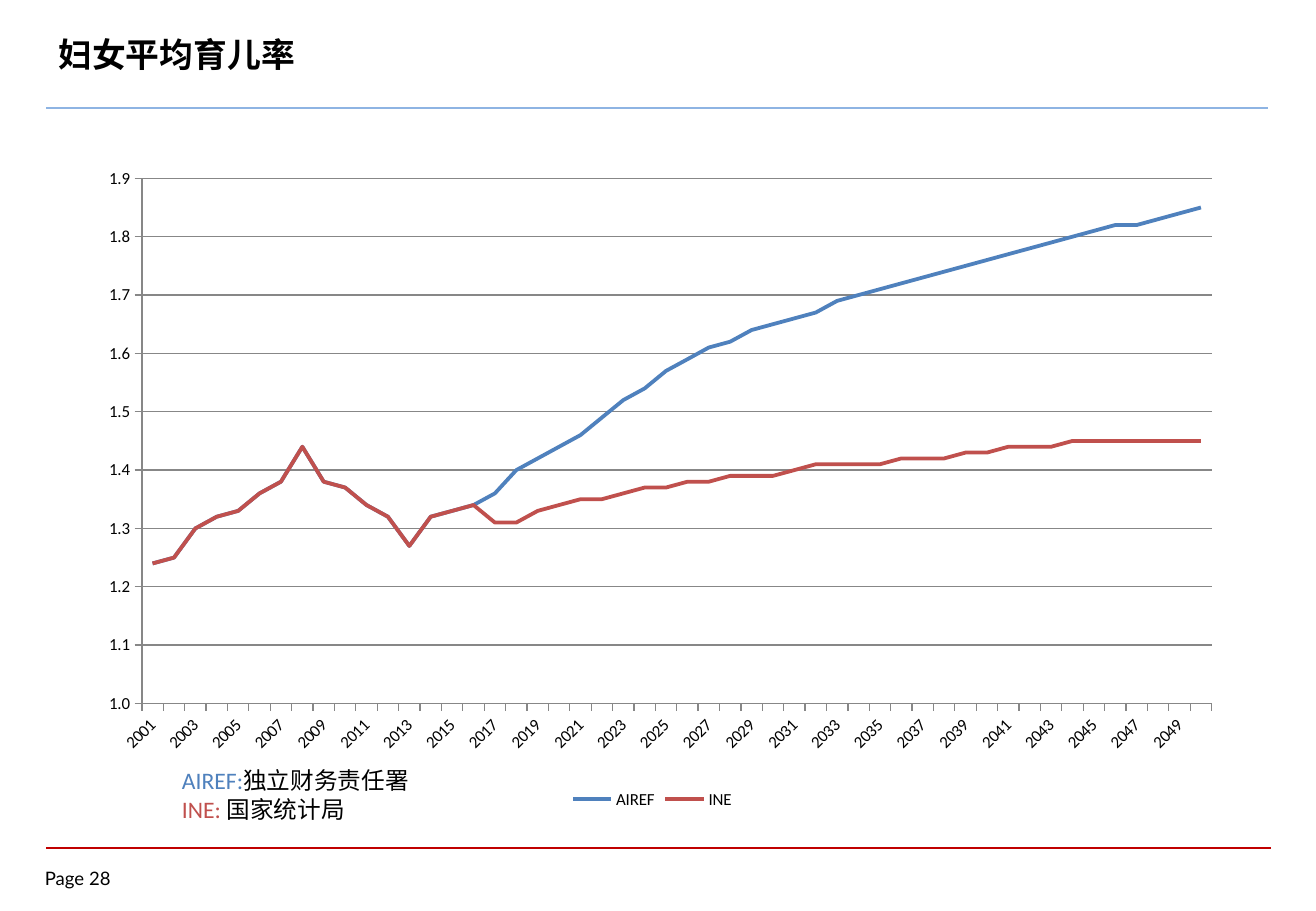
from lxml import etree
from pptx import Presentation
from pptx.chart.data import CategoryChartData
from pptx.dml.color import RGBColor
from pptx.enum import chart as ch, shapes, text
from pptx.oxml import parse_xml
from pptx.oxml.ns import qn, nsdecls
from pptx.util import Pt

# Content
COLORS = {"black": "000000", "white": "FFFFFF", "red": "C00000", "sky": "8EB4E3",
          "grid": "878787", "AIREF": "4F81BD", "INE": "C0504D"}
TITLE = "妇女平均育儿率"
PAGE = "Page 28"
NOTES = [("AIREF", "AIREF:", "独立财务责任署"), ("INE", "INE: ", "国家统计局")]
FIRST_YEAR, LAST_YEAR = 2001, 2050
OBSERVED = [1.24, 1.25, 1.3, 1.32, 1.33, 1.36, 1.38, 1.44,
            1.38, 1.37, 1.34, 1.32, 1.27, 1.32, 1.33, 1.34]
FORECASTS = {
    "AIREF": [1.36, 1.4, 1.42, 1.44, 1.46, 1.49, 1.52, 1.54, 1.57, 1.59, 1.61, 1.62,
              1.64, 1.65, 1.66, 1.67, 1.69, 1.7, 1.71, 1.72, 1.73, 1.74, 1.75, 1.76,
              1.77, 1.78, 1.79, 1.8, 1.81, 1.82, 1.82, 1.83, 1.84, 1.85],
    "INE": [1.31, 1.31, 1.33, 1.34, 1.35, 1.35, 1.36, 1.37, 1.37, 1.38, 1.38, 1.39,
            1.39, 1.39, 1.4, 1.41, 1.41, 1.41, 1.41, 1.42, 1.42, 1.42, 1.43, 1.43,
            1.44, 1.44, 1.44, 1.45, 1.45, 1.45, 1.45, 1.45, 1.45, 1.45],
}
PLOT = {"x": 0.073, "y": 0.071, "w": 0.895, "h": 0.768}
# Rules: left, right, y, colour, width
RULES = [(27.4, 753.1, 502.6, "red", 1), (27.4, 751.7, 64.1, "sky", 1.5)]


def rgb(name):
    return RGBColor.from_string(COLORS[name])


def add_run(p, words, size, font, color="black", bold=False):
    r = p.add_run()
    r.text = words
    r.font.size, r.font.name, r.font.bold = Pt(size), font, bold
    r.font.color.rgb = rgb(color)


def set_margins(tf, x, y):
    tf.margin_left = tf.margin_right = Pt(x)
    tf.margin_top = tf.margin_bottom = Pt(y)


prs = Presentation()
prs.slide_width, prs.slide_height = Pt(780), Pt(540)
s = prs.slides.add_slide(prs.slide_layouts[5])

# Header and footer rules
for left, right, y, color, width in RULES:
    line = s.shapes.add_connector(shapes.MSO_CONNECTOR.STRAIGHT,
                                  Pt(left), Pt(y), Pt(right), Pt(y))
    line.line.color.rgb, line.line.width = rgb(color), Pt(width)
    etree.SubElement(line._element.spPr, qn("a:effectLst"))

# Title
title = s.shapes.title
title.left, title.top, title.width, title.height = Pt(27.4), Pt(6.5), Pt(714.2), Pt(51.1)
tf = title.text_frame
tf.vertical_anchor = text.MSO_ANCHOR.MIDDLE
set_margins(tf, 7.2, 3.6)
tf.paragraphs[0].alignment = text.PP_ALIGN.LEFT
add_run(tf.paragraphs[0], TITLE, 20, "Lato", bold=True)

# Page number
tf = s.shapes.add_textbox(Pt(26.6), Pt(514.1), Pt(52.6), Pt(15.8)).text_frame
set_margins(tf, 0, 0)
add_run(tf.paragraphs[0], PAGE, 11, "Lato")

# Fertility chart
data = CategoryChartData(number_format="0.00")
data.categories = [str(year) for year in range(FIRST_YEAR, LAST_YEAR + 1)]
for name, forecast in FORECASTS.items():
    data.add_series(name, OBSERVED + forecast)
chart = s.shapes.add_chart(ch.XL_CHART_TYPE.LINE, Pt(32.4), Pt(77), Pt(708.5), Pt(405.4),
                           data).chart
chart.font.size, chart.font.name = Pt(10), "Calibri"
chart.font.color.rgb = rgb("black")
chart.has_title = False
chart.has_legend = True
chart.legend.position = ch.XL_LEGEND_POSITION.BOTTOM
chart.legend.include_in_layout = False
chart.plots[0].vary_by_categories = False
for series in chart.plots[0].series:
    series.smooth = False
    series.marker.style = ch.XL_MARKER_STYLE.NONE
    series.format.line.color.rgb = rgb(series.name)
    series.format.line.width = Pt(2.25)

# Axes
years, rates = chart.category_axis, chart.value_axis
rates.minimum_scale, rates.maximum_scale, rates.major_unit = 1, 1.9, 0.1
rates.tick_labels.number_format = "0.0"
rates.tick_labels.number_format_is_linked = False
rates.has_major_gridlines = True
for axis in (years, rates):
    axis.major_tick_mark = ch.XL_TICK_MARK.OUTSIDE
    axis.minor_tick_mark = ch.XL_TICK_MARK.NONE
    axis.tick_labels.font.size = Pt(10)
for part in (years, rates, rates.major_gridlines):
    part.format.line.color.rgb, part.format.line.width = rgb("grid"), Pt(0.75)

# Slanted label for every second year
cat_ax = years._element
cat_ax.find(qn("c:txPr")).find(qn("a:bodyPr")).set("rot", "-2700000")
cat_ax.find(qn("c:lblOffset")).addnext(
    parse_xml(f'<c:tickLblSkip {nsdecls("c")} val="2"/>'))

# Fixed inner plot area
plot_area = chart._chartSpace.chart.plotArea
for old in plot_area.findall(qn("c:layout")):
    plot_area.remove(old)
modes = '<c:layoutTarget val="inner"/><c:xMode val="edge"/><c:yMode val="edge"/>'
sizes = "".join(f'<c:{key} val="{val}"/>' for key, val in PLOT.items())
plot_area.insert(0, parse_xml(
    f'<c:layout {nsdecls("c")}><c:manualLayout>{modes}{sizes}</c:manualLayout></c:layout>'))

# Key to the abbreviations
sp = s.shapes.add_shape(shapes.MSO_SHAPE.RECTANGLE, Pt(100.8), Pt(450.7), Pt(175.7), Pt(41))
sp.shadow.inherit = False
sp.fill.solid()
sp.fill.fore_color.rgb = rgb("white")
sp.line.fill.background()
tf = sp.text_frame
tf.word_wrap = True
tf.vertical_anchor = text.MSO_ANCHOR.TOP
set_margins(tf, 7.2, 3.6)
for i, (color, label, meaning) in enumerate(NOTES):
    p = tf.add_paragraph() if i else tf.paragraphs[0]
    p.alignment = text.PP_ALIGN.LEFT
    add_run(p, label, 14, "Calibri", color)
    add_run(p, meaning, 14, "Calibri")

prs.save("out.pptx")
